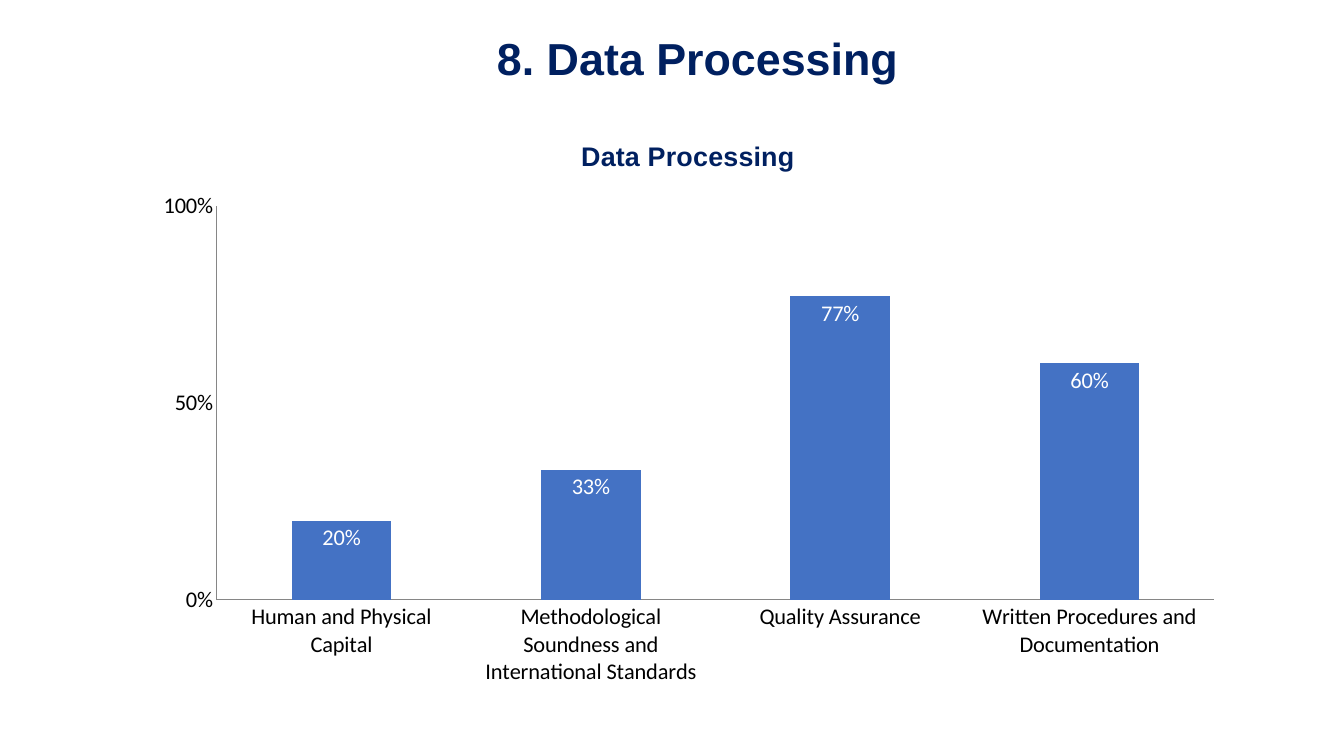
from lxml.etree import SubElement
from pptx import Presentation
from pptx.chart.data import CategoryChartData
from pptx.dml.color import RGBColor
from pptx.enum.chart import XL_CHART_TYPE, XL_LABEL_POSITION, XL_TICK_MARK
from pptx.enum.text import MSO_ANCHOR, MSO_AUTO_SIZE, PP_ALIGN
from pptx.oxml.ns import qn
from pptx.util import Inches, Pt

# Content
SLIDE_TITLE = "8. Data Processing"
CHART_TITLE = "Data Processing"
SCORES = {
    "Human and Physical Capital": 0.20,
    "Methodological Soundness and International Standards": 0.33,
    "Quality Assurance": 0.77,
    "Written Procedures and Documentation": 0.60,
}

# Format
COLORS = {"navy": "002060", "bar": "4472C4", "axis": "868686",
          "text": "000000", "label": "FFFFFF"}
FONTS = {
    "title": {"name": "Arial", "size": Pt(32), "bold": True, "color": "navy"},
    "chart title": {"name": "Arial", "size": Pt(19.2), "bold": True, "color": "navy"},
    "chart": {"name": "Calibri", "size": Pt(16), "bold": False, "color": "text"},
    "label": {"name": "Calibri", "size": Pt(16), "bold": False, "color": "label"},
}
SLIDE_SIZE = (13.33, 7.5)
TITLE_BOX = (1.67, 0.16, 10.5, 0.89)
CHART_BOX = (1.39, 1.15, 10.87, 5.75)
PLOT_SHARES = {"x": 0.07, "y": 0.155, "w": 0.91, "h": 0.68}


def color(name):
    return RGBColor.from_string(COLORS[name])


def set_font(font, style):
    for key, value in FONTS[style].items():
        if key == "color":
            font.color.rgb = color(value)
        else:
            setattr(font, key, value)


def add_title(page):
    title = page.shapes.title
    for side, length in zip(("left", "top", "width", "height"), TITLE_BOX):
        setattr(title, side, Inches(length))
    frame = title.text_frame
    frame.text = SLIDE_TITLE
    frame.auto_size = MSO_AUTO_SIZE.NONE
    frame.vertical_anchor = MSO_ANCHOR.MIDDLE
    para = frame.paragraphs[0]
    para.alignment, para.line_spacing = PP_ALIGN.CENTER, 0.9
    set_font(para.runs[0].font, "title")


def place_plot(chart):
    """Fix the inner plot area as shares of the chart."""
    plot_area = chart.element.find(".//" + qn("c:plotArea"))
    layout = plot_area.find(qn("c:layout"))
    if layout is None:
        layout = SubElement(plot_area, qn("c:layout"))
        plot_area.insert(0, layout)
    manual = SubElement(layout, qn("c:manualLayout"))
    settings = {"layoutTarget": "inner", "xMode": "edge", "yMode": "edge", **PLOT_SHARES}
    for tag, value in settings.items():
        SubElement(manual, qn("c:" + tag)).set("val", str(value))


def add_score_chart(page):
    data = CategoryChartData(number_format="0%")
    data.categories = list(SCORES)
    data.add_series("Series 1", list(SCORES.values()))
    chart = page.shapes.add_chart(XL_CHART_TYPE.COLUMN_CLUSTERED,
                                  *map(Inches, CHART_BOX), data).chart
    chart.has_legend = False
    set_font(chart.font, "chart")

    # Chart title
    chart.has_title = True
    frame = chart.chart_title.text_frame
    frame.text = CHART_TITLE
    set_font(frame.paragraphs[0].runs[0].font, "chart title")
    chart.chart_title.include_in_layout = False

    # Axes
    for axis in (chart.category_axis, chart.value_axis):
        axis.major_tick_mark = axis.minor_tick_mark = XL_TICK_MARK.NONE
        axis.has_major_gridlines = False
        axis.format.line.color.rgb = color("axis")
        axis.format.line.width = Pt(0.75)
    scale = {"minimum_scale": 0, "maximum_scale": 1, "major_unit": 0.5}
    for key, value in scale.items():
        setattr(chart.value_axis, key, value)
    chart.value_axis.tick_labels.number_format = "0%"
    chart.value_axis.tick_labels.number_format_is_linked = False

    # Columns and their labels
    plot = chart.plots[0]
    plot.gap_width, plot.vary_by_categories = 150, False
    series = plot.series[0]
    series.format.fill.solid()
    series.format.fill.fore_color.rgb = color("bar")
    labels = series.data_labels
    label_format = {"show_value": True, "position": XL_LABEL_POSITION.INSIDE_END,
                    "number_format": "0%", "number_format_is_linked": False}
    for key, value in label_format.items():
        setattr(labels, key, value)
    set_font(labels.font, "label")
    place_plot(chart)


def main():
    deck = Presentation()
    deck.slide_width, deck.slide_height = map(Inches, SLIDE_SIZE)
    page = deck.slides.add_slide(deck.slide_layouts.get_by_name("Title Only"))
    add_title(page)
    add_score_chart(page)
    deck.save("out.pptx")


if __name__ == "__main__":
    main()
